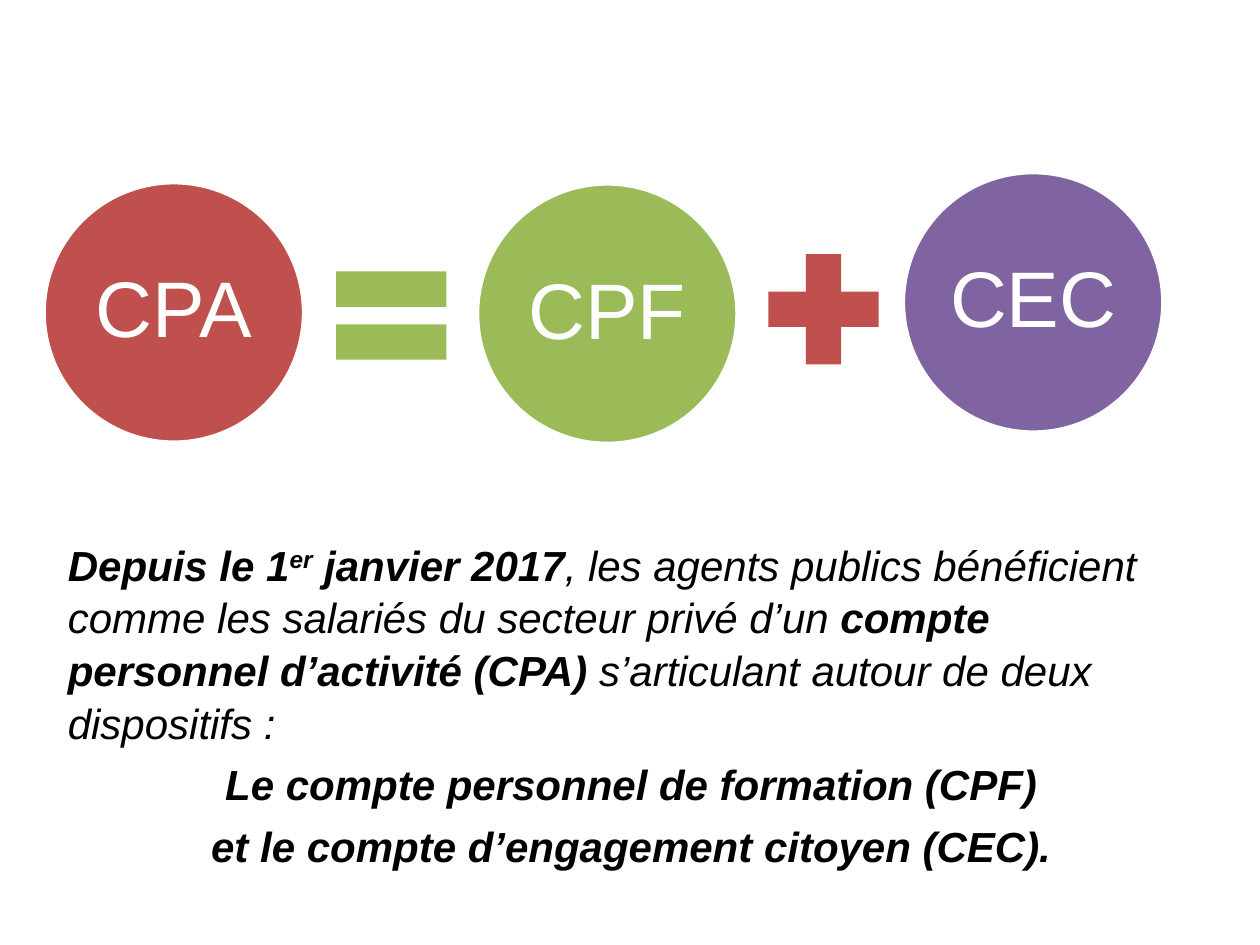
from typing import NamedTuple

from pptx import Presentation
from pptx.dml.color import RGBColor
from pptx.enum.shapes import MSO_SHAPE
from pptx.enum.text import MSO_ANCHOR, PP_ALIGN
from pptx.util import Inches, Pt

RED, GREEN, PURPLE = "C0504D", "9BBB59", "8064A2"
WHITE, BLACK = "FFFFFF", "000000"
CIRCLE_SIZE, OPERATOR_SIZE = 2.06, 1.19


class Circle(NamedTuple):
    label: str
    left: float
    top: float
    color: str


class Operator(NamedTuple):
    kind: MSO_SHAPE
    left: float
    top: float
    color: str


class Run(NamedTuple):
    text: str
    bold: bool = True
    superscript: bool = False


class TextLine(NamedTuple):
    alignment: PP_ALIGN
    runs: list[Run]


CIRCLES = [
    Circle("CPA", 0.35, 1.45, RED),
    Circle("CPF", 3.79, 1.46, GREEN),
    Circle("CEC", 7.17, 1.37, PURPLE),
]
OPERATORS = [
    Operator(MSO_SHAPE.MATH_EQUAL, 2.51, 1.91, GREEN),
    Operator(MSO_SHAPE.MATH_PLUS, 5.94, 1.86, RED),
]
EXPLANATION = [
    TextLine(PP_ALIGN.LEFT, [
        Run("Depuis le 1"),
        Run("er", superscript=True),
        Run(" janvier 2017"),
        Run(", les agents publics bénéficient comme les salariés du secteur privé d’un ", bold=False),
        Run("compte personnel d’activité (CPA) "),
        Run("s’articulant autour de deux dispositifs :", bold=False),
    ]),
    TextLine(PP_ALIGN.CENTER, [Run("Le compte personnel de formation (CPF)")]),
    TextLine(PP_ALIGN.CENTER, [Run("et le compte d’engagement citoyen (CEC).")]),
]


def rgb(value: str) -> RGBColor:
    return RGBColor.from_string(value)


def set_attributes(target, values: dict) -> None:
    for name, value in values.items():
        setattr(target, name, value)


def set_font(font, color: str, **values) -> None:
    set_attributes(font, {"name": "Arial", **values})
    font.color.rgb = rgb(color)


def add_filled_shape(slide, kind: MSO_SHAPE, left: float, top: float, size: float, color: str):
    shape = slide.shapes.add_shape(kind, Inches(left), Inches(top), Inches(size), Inches(size))
    shape.shadow.inherit = False
    shape.fill.solid()
    shape.fill.fore_color.rgb = rgb(color)
    shape.line.fill.background()
    return shape


def add_circle(slide, circle: Circle) -> None:
    shape = add_filled_shape(slide, MSO_SHAPE.OVAL, circle.left, circle.top, CIRCLE_SIZE, circle.color)
    shape.line.color.rgb = rgb(WHITE)
    shape.line.width = Pt(2)
    margins = ("margin_left", "margin_top", "margin_right", "margin_bottom")
    set_attributes(shape.text_frame, {
        "word_wrap": False,
        "vertical_anchor": MSO_ANCHOR.MIDDLE,
        **dict.fromkeys(margins, Inches(0.06)),
    })
    paragraph = shape.text_frame.paragraphs[0]
    set_attributes(paragraph, {"alignment": PP_ALIGN.CENTER, "line_spacing": 0.9})
    run = paragraph.add_run()
    run.text = circle.label
    set_font(run.font, WHITE, size=Pt(45))


def add_explanation(slide, lines: list[TextLine]) -> None:
    box = slide.shapes.add_textbox(Inches(0.44), Inches(4.21), Inches(9.14), Inches(2.7))
    frame = box.text_frame
    frame.word_wrap = True
    for index, line in enumerate(lines):
        paragraph = frame.add_paragraph() if index else frame.paragraphs[0]
        set_attributes(paragraph, {
            "alignment": line.alignment,
            "line_spacing": 1.05,
            "space_before": Pt(4.8 if index else 0),
        })
        for part in line.runs:
            run = paragraph.add_run()
            run.text = part.text
            set_font(run.font, BLACK, size=Pt(24), bold=part.bold, italic=True)
            if part.superscript:
                run.font._element.set("baseline", "30000")


def main() -> None:
    presentation = Presentation()
    presentation.slide_width = Inches(10)
    presentation.slide_height = Inches(7.5)
    slide = presentation.slides.add_slide(presentation.slide_layouts[6])
    add_explanation(slide, EXPLANATION)
    for circle in CIRCLES:
        add_circle(slide, circle)
    for operator in OPERATORS:
        add_filled_shape(slide, operator.kind, operator.left, operator.top, OPERATOR_SIZE, operator.color)
    presentation.save("out.pptx")


if __name__ == "__main__":
    main()
